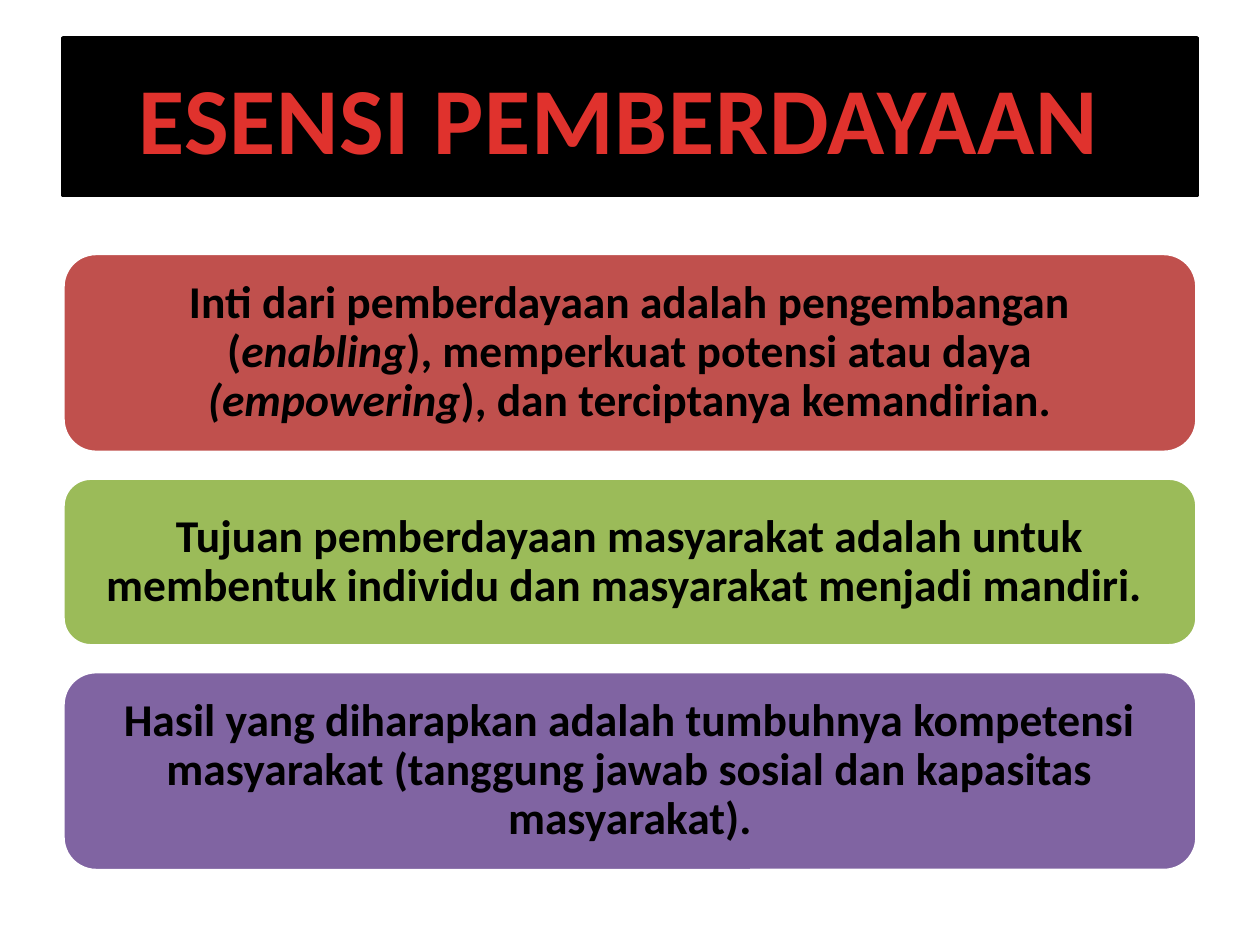
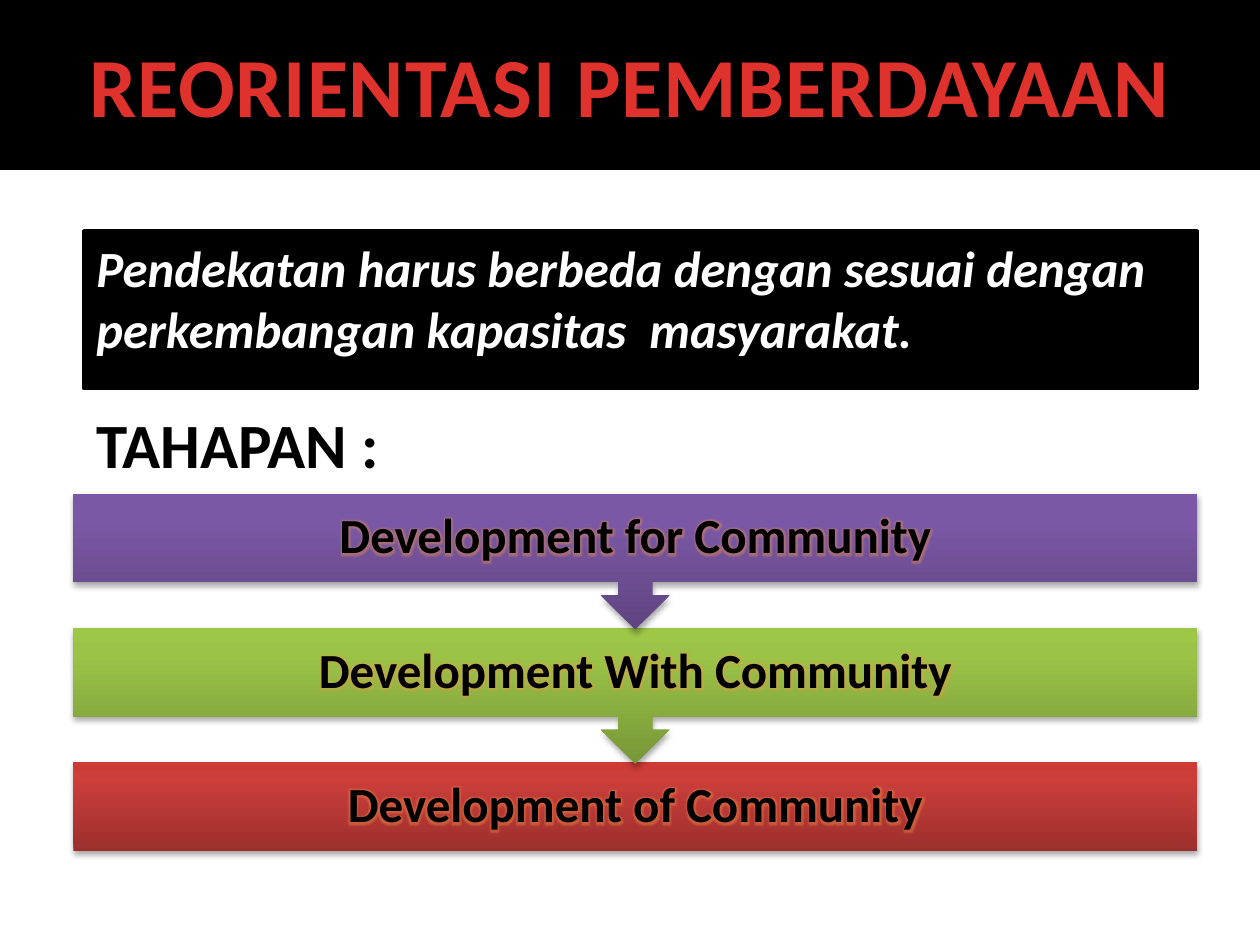
"""Build two slides on the essence and reorientation of community empowerment."""
from copy import deepcopy
from dataclasses import dataclass

from lxml import etree
from pptx import Presentation
from pptx import util as u
from pptx.dml.color import RGBColor
from pptx.dml.fill import FillFormat
from pptx.enum import shapes, text
from pptx.oxml.ns import qn
from pptx.shapes.autoshape import Shape
from pptx.slide import Slide
from pptx.text.text import TextFrame, _Run

FONT = "Calibri"
BLACK = RGBColor(0x00, 0x00, 0x00)
WHITE = RGBColor(0xFF, 0xFF, 0xFF)
BRICK = RGBColor(0xC0, 0x50, 0x4D)
OLIVE = RGBColor(0x9B, 0xBB, 0x59)
VIOLET = RGBColor(0x80, 0x64, 0xA2)
GLOW = RGBColor(0xF7, 0x96, 0x46)
Stops = list[tuple[float, RGBColor]]
TITLE_STOPS: Stops = [(0.25, RGBColor(0xE0, 0x32, 0x2D)), (1, RGBColor(0xA2, 0x20, 0x1C))]

CALLOUT = shapes.MSO_SHAPE.DOWN_ARROW_CALLOUT
BAR = shapes.MSO_SHAPE.RECTANGLE
CENTER = text.PP_ALIGN.CENTER
MIDDLE = text.MSO_ANCHOR.MIDDLE


@dataclass(frozen=True)
class Box:
    """Position and size in centimetres."""
    left: float
    top: float
    width: float
    height: float

    def lengths(self) -> tuple[u.Length, ...]:
        """Return the four values as lengths."""
        return tuple(u.Cm(v) for v in (self.left, self.top, self.width, self.height))


@dataclass(frozen=True)
class Phrase:
    """A run of text, upright or italic."""
    words: str
    italic: bool = False


@dataclass(frozen=True)
class Essence:
    """A rounded panel that states one point."""
    phrases: list[Phrase]
    color: RGBColor
    height: float


@dataclass(frozen=True)
class Stage:
    """A step in the chain of development stages."""
    label: str
    dark: RGBColor
    mid: RGBColor
    light: RGBColor
    outline: shapes.MSO_SHAPE = CALLOUT
    height: float = 2.74


ESSENCES = [
    Essence([Phrase("Inti dari pemberdayaan adalah pengembangan ("),
             Phrase("enabling", True),
             Phrase("), memperkuat potensi atau daya "),
             Phrase("(empowering", True),
             Phrase("), dan terciptanya kemandirian.")], BRICK, 4.01),
    Essence([Phrase("Tujuan pemberdayaan masyarakat adalah untuk membentuk "
                    "individu dan masyarakat menjadi mandiri. ")], OLIVE, 3.38),
    Essence([Phrase("Hasil yang diharapkan adalah tumbuhnya kompetensi masyarakat "
                    "(tanggung jawab sosial dan kapasitas masyarakat).")], VIOLET, 4.01),
]
ESSENCE_TOP, ESSENCE_GAP = 5.11, 0.52

STAGES = [
    Stage("Development for Community", RGBColor(0x5F, 0x44, 0x80),
          RGBColor(0x7B, 0x58, 0xA6), RGBColor(0x7C, 0x57, 0xA8)),
    Stage("Development With Community", RGBColor(0x77, 0x97, 0x37),
          RGBColor(0x9B, 0xC3, 0x48), RGBColor(0x9D, 0xC7, 0x46)),
    Stage("Development of Community", RGBColor(0x9C, 0x2F, 0x2D),
          RGBColor(0xCB, 0x3E, 0x3A), RGBColor(0xCE, 0x3B, 0x37), BAR, 1.78),
]
STAGE_TOP, STAGE_PITCH = 9.95, 2.71


def set_gradient(fill: FillFormat, properties: etree._Element, stops: Stops, angle: float) -> None:
    """Give a fill a linear gradient, its angle counted counter-clockwise."""
    fill.gradient()
    fill.gradient_angle = angle
    stop_list = properties.find(".//" + qn("a:gsLst"))
    while len(stop_list) < len(stops):
        stop_list.append(deepcopy(stop_list[-1]))
    for stop, (position, color) in zip(fill.gradient_stops, stops):
        stop.color.rgb = color
        stop.position = position


def add_effect(effects: etree._Element, kind: str, color: RGBColor, alpha: int, **settings: str) -> None:
    """Add a translucent shadow or glow to an effect list."""
    effect = etree.SubElement(effects, qn(f"a:{kind}"), settings)
    tone = etree.SubElement(effect, qn("a:srgbClr"), val=str(color))
    etree.SubElement(tone, qn("a:alpha"), val=str(alpha * 1000))


def add_run(frame: TextFrame, phrase: Phrase, size: float, color: RGBColor = BLACK) -> _Run:
    """Append a bold run to the first paragraph."""
    run = frame.paragraphs[0].add_run()
    run.text = phrase.words
    run.font.name, run.font.size = FONT, u.Pt(size)
    run.font.bold, run.font.italic = True, phrase.italic
    run.font.color.rgb = color
    return run


def center_text(frame: TextFrame, side: float, edge: float) -> None:
    """Centre wrapped text with tight lines and the given insets."""
    frame.word_wrap = True
    frame.vertical_anchor = MIDDLE
    frame.margin_left = frame.margin_right = u.Cm(side)
    frame.margin_top = frame.margin_bottom = u.Cm(edge)
    frame.paragraphs[0].alignment = CENTER
    frame.paragraphs[0].line_spacing = 0.9


def place_on_black(holder: Shape, box: Box) -> TextFrame:
    """Move a placeholder onto a black panel and return its text frame."""
    holder.left, holder.top, holder.width, holder.height = box.lengths()
    holder.fill.solid()
    holder.fill.fore_color.rgb = BLACK
    holder.line.color.rgb = BLACK
    holder.line.width = u.Pt(2)
    holder.text_frame.auto_size = text.MSO_AUTO_SIZE.NONE
    return holder.text_frame


def set_title(slide: Slide, words: str, box: Box, size: float) -> None:
    """Write the red title on its black band."""
    frame = place_on_black(slide.shapes.title, box)
    frame.vertical_anchor = MIDDLE
    frame.paragraphs[0].alignment = CENTER
    run = add_run(frame, Phrase(words), size)
    run._r.rPr.set("spc", "50")
    set_gradient(run.font.fill, run._r.rPr, TITLE_STOPS, 270)


def draw_essence(slide: Slide, essence: Essence, top: float) -> None:
    """Draw one rounded panel with its statement."""
    panel = slide.shapes.add_shape(shapes.MSO_SHAPE.ROUNDED_RECTANGLE,
                                   *Box(1.27, top, 22.86, essence.height).lengths())
    panel.shadow.inherit = False
    panel.fill.solid()
    panel.fill.fore_color.rgb = essence.color
    panel.line.color.rgb = WHITE
    panel.line.width = u.Pt(2)
    center_text(panel.text_frame, 0.28, 0.28)
    for phrase in essence.phrases:
        add_run(panel.text_frame, phrase, 26)


def draw_stage(slide: Slide, stage: Stage, top: float) -> None:
    """Draw one shaded step with its glowing label."""
    step = slide.shapes.add_shape(stage.outline, *Box(1.48, top, 22.65, stage.height).lengths())
    properties = step._element.spPr
    set_gradient(step.fill, properties,
                 [(0, stage.dark), (0.8, stage.mid), (1, stage.light)], 90)
    step.line.fill.background()
    step.shadow.inherit = False
    add_effect(properties.find(qn("a:effectLst")), "outerShdw", BLACK, 35,
               blurRad="40000", dist="23000", dir="5400000", rotWithShape="0")
    center_text(step.text_frame, 0.56, 0)
    label = add_run(step.text_frame, Phrase(stage.label), 28)
    effects = etree.Element(qn("a:effectLst"))
    label._r.rPr.find(qn("a:solidFill")).addnext(effects)
    add_effect(effects, "glow", GLOW, 40, rad="63500")


def build_essence_slide(deck: Presentation) -> None:
    """Build the slide on the essence of empowerment."""
    slide = deck.slides.add_slide(deck.slide_layouts[5])
    set_title(slide, "ESENSI PEMBERDAYAAN ", Box(1.27, 0.76, 22.86, 3.18), 54)
    top = ESSENCE_TOP
    for essence in ESSENCES:
        draw_essence(slide, essence, top)
        top += essence.height + ESSENCE_GAP


def build_reorientation_slide(deck: Presentation) -> None:
    """Build the slide on the stages of empowerment."""
    slide = deck.slides.add_slide(deck.slide_layouts[1])
    set_title(slide, "REORIENTASI PEMBERDAYAAN", Box(0, 0, 25.4, 3.39), 48)

    approach = place_on_black(slide.placeholders[1], Box(1.69, 4.65, 22.44, 3.18))
    settings = approach.paragraphs[0]._p.get_or_add_pPr()
    settings.set("marL", "0")
    settings.set("indent", "0")
    etree.SubElement(settings, qn("a:buNone"))
    add_run(approach, Phrase("Pendekatan harus berbeda dengan sesuai dengan "
                             "perkembangan kapasitas  masyarakat.", True), 29, WHITE)

    for index, stage in reversed(list(enumerate(STAGES))):
        draw_stage(slide, stage, STAGE_TOP + index * STAGE_PITCH)

    heading = slide.shapes.add_textbox(*Box(1.69, 8.05, 7.42, 1.8).lengths()).text_frame
    heading.word_wrap = True
    heading.auto_size = text.MSO_AUTO_SIZE.SHAPE_TO_FIT_TEXT
    add_run(heading, Phrase("TAHAPAN :"), 36)


def main() -> None:
    """Build and save the deck."""
    deck = Presentation()
    deck.slide_width, deck.slide_height = u.Cm(25.4), u.Cm(19.05)
    build_essence_slide(deck)
    build_reorientation_slide(deck)
    deck.save("out.pptx")


if __name__ == "__main__":
    main()
